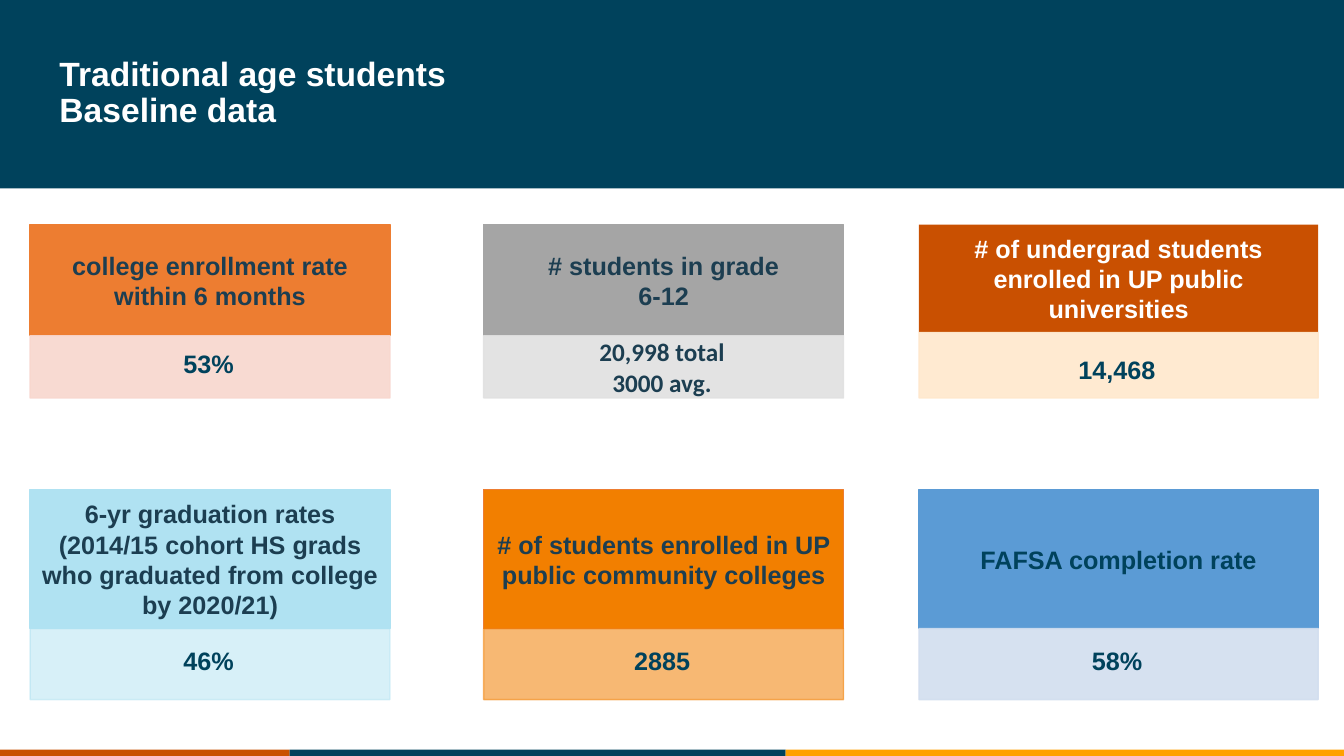
from dataclasses import dataclass

from lxml.etree import SubElement
from pptx import Presentation
from pptx.dml.color import RGBColor
from pptx.enum.shapes import MSO_SHAPE
from pptx.enum.text import MSO_ANCHOR, PP_ALIGN
from pptx.oxml.ns import qn
from pptx.shapes.autoshape import Shape
from pptx.slide import Slide
from pptx.util import Cm, Pt

WHITE = RGBColor(0xFF, 0xFF, 0xFF)
TEAL = RGBColor(0x00, 0x42, 0x5C)
SLATE = RGBColor(0x1C, 0x3E, 0x51)
RUST = RGBColor(0xC9, 0x50, 0x01)
AMBER = RGBColor(0xFF, 0xA1, 0x00)
CORAL = RGBColor(0xED, 0x7D, 0x31)
BLUSH = RGBColor(0xF8, 0xD7, 0xCE)
GRAY = RGBColor(0xA5, 0xA5, 0xA5)
SILVER = RGBColor(0xE1, 0xE1, 0xE1)
CREAM = RGBColor(0xFF, 0xE8, 0xCC)
AQUA = RGBColor(0xB0, 0xE2, 0xF2)
ORANGE = RGBColor(0xF2, 0x7F, 0x00)
BLUE = RGBColor(0x5B, 0x9B, 0xD5)
MIST = RGBColor(0xD2, 0xDE, 0xEF)

WIDTH, HEIGHT = 33.87, 19.05
Insets = tuple[float, float, float, float]
HEAD_PAD: Insets = (0.28, 0.15, 0.28, 0.15)
BODY_PAD: Insets = (0.2, 0.2, 0.28, 0.3)


@dataclass
class Column:
    left: float
    width: float


@dataclass
class Row:
    top: float
    split: float
    end: float


@dataclass
class Card:
    """A measure: a heading panel above a value panel."""
    col: Column
    row: Row
    label: str
    value: str
    tone: RGBColor
    tint: RGBColor
    edge: RGBColor | None
    alpha: int = 90
    ink: RGBColor = SLATE
    pad: Insets = BODY_PAD


ONE, TWO, THREE = Column(0.76, 9.07), Column(12.19, 9.07), Column(23.16, 10.06)
UPPER, SHORT, LOWER = Row(5.66, 8.46, 10.03), Row(5.66, 8.38, 10.03), Row(12.34, 15.84, 17.63)

CARDS = [
    Card(ONE, UPPER, "college enrollment rate within 6 months", "53%",
         CORAL, BLUSH, CORAL),
    Card(TWO, UPPER, "# students in grade\v6-12", "20,998 total\v3000 avg.",
         GRAY, SILVER, GRAY, pad=(0.2, 0, 0.28, 0)),
    Card(THREE, SHORT, "# of undergrad students enrolled in UP public universities",
         "14,468", RUST, CREAM, None, ink=WHITE, pad=(0.2, 0.4, 0.28, 0.1)),
    Card(ONE, LOWER, "6-yr graduation rates (2014/15 cohort HS grads who graduated "
         "from college by 2020/21)", "46%", AQUA, AQUA, AQUA, 50),
    Card(TWO, LOWER, "# of students enrolled in UP public community colleges", "2885",
         ORANGE, ORANGE, CORAL, 55),
    Card(THREE, LOWER, "FAFSA completion rate", "58%", BLUE, MIST, BLUE, ink=TEAL),
]


def add_box(slide: Slide, left: float, top: float, width: float, height: float,
            fill: RGBColor, edge: RGBColor | None = None, alpha: int = 100) -> Shape:
    """Draw a rectangle; alpha is the opacity of fill and edge in percent."""
    box = slide.shapes.add_shape(MSO_SHAPE.RECTANGLE, Cm(left), Cm(top), Cm(width), Cm(height))
    box.shadow.inherit = False
    box.fill.solid()
    box.fill.fore_color.rgb = fill
    if edge is None:
        box.line.fill.background()
    else:
        box.line.color.rgb = edge
        box.line.width = Pt(1)
    if alpha < 100:
        for color in box.element.spPr.iter(qn("a:srgbClr")):
            SubElement(color, qn("a:alpha")).set("val", str(alpha * 1000))
    return box


def write(shape: Shape, text: str, size: int, ink: RGBColor, pad: Insets,
          align: PP_ALIGN = PP_ALIGN.CENTER, space: float = 1.0,
          face: str = "Arial") -> None:
    frame = shape.text_frame
    frame.word_wrap = True
    frame.vertical_anchor = MSO_ANCHOR.MIDDLE
    (frame.margin_left, frame.margin_top,
     frame.margin_right, frame.margin_bottom) = map(Cm, pad)
    frame.text = text
    para = frame.paragraphs[0]
    para.alignment = align
    para.line_spacing = space
    para.font.name = face
    para.font.size = Pt(size)
    para.font.bold = True
    para.font.color.rgb = ink


def add_card(slide: Slide, card: Card) -> None:
    col, row = card.col, card.row
    head = add_box(slide, col.left, row.top, col.width, row.split - row.top,
                   card.tone, card.edge)
    write(head, card.label, 18, card.ink, HEAD_PAD)
    body = add_box(slide, col.left, row.split, col.width, row.end - row.split,
                   card.tint, card.tint, card.alpha)
    if "\v" in card.value:
        write(body, card.value, 18, SLATE, card.pad, face="Calibri")
    else:
        write(body, card.value, 18, TEAL, card.pad, space=0.9)


def main() -> None:
    deck = Presentation()
    deck.slide_width, deck.slide_height = Cm(WIDTH), Cm(HEIGHT)
    slide = deck.slides.add_slide(deck.slide_layouts[6])

    add_box(slide, 0, 0, WIDTH, 4.75, TEAL)
    stops = [0, 7.3, 19.8, WIDTH]
    for left, right, color in zip(stops, stops[1:], (RUST, TEAL, AMBER)):
        add_box(slide, left, 18.89, right - left, HEIGHT - 18.89, color)

    title = slide.shapes.add_textbox(Cm(1.25), Cm(0.81), Cm(28.22), Cm(3.1))
    write(title, "Traditional age students\vBaseline data", 24, WHITE,
          (0.25, 0.13, 0.25, 0.13), PP_ALIGN.LEFT, 0.9)

    for card in CARDS:
        add_card(slide, card)
    deck.save("out.pptx")


if __name__ == "__main__":
    main()
